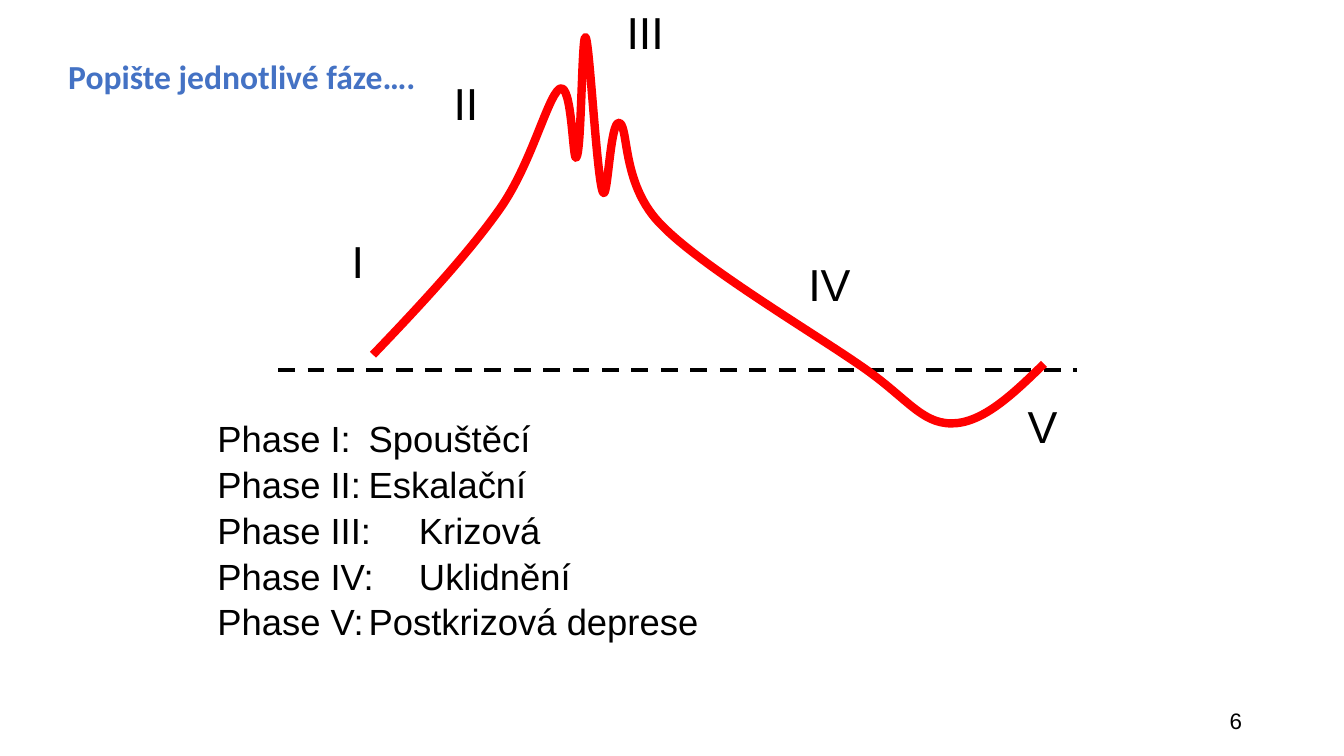
from lxml import etree
from pptx import Presentation
from pptx.dml.color import RGBColor
from pptx.enum.dml import MSO_LINE
from pptx.enum.shapes import MSO_CONNECTOR
from pptx.enum.text import MSO_ANCHOR as ANCHOR, PP_ALIGN as ALIGN
from pptx.oxml.ns import qn
from pptx.util import Cm, Pt

BLACK, RED, BLUE = "000000", "FF0000", "4472C4"

TITLE = "Popište jednotlivé fáze…."
PAGE_NUMBER = "6"
PHASES = [
    ("Phase I:", "Spouštěcí"),
    ("Phase II:", "Eskalační"),
    ("Phase III:", "Krizová"),
    ("Phase IV:", "Uklidnění"),
    ("Phase V:", "Postkrizová deprese"),
]
# numeral: left, top, width in cm
LABELS = {
    "I": (8.61, 5.77, 1.57),
    "II": (11.18, 1.78, 1.9),
    "III": (15.54, 0, 2.97),
    "IV": (20.12, 6.35, 1.9),
    "V": (25.65, 9.93, 1.9),
}
BASELINE = (7.01, 27.13, 9.32)  # left, right, height on the slide in cm
CURVE_START = (9.4, 8.94)
# two control points and an end point per segment, in cm
CURVE = [
    ((10.62, 7.67), (11.81, 6.38), (12.6, 5.26)),
    ((13.39, 4.14), (13.79, 2.46), (14.1, 2.24)),
    ((14.43, 2.03), (14.43, 4.19), (14.53, 3.96)),
    ((14.66, 3.76), (14.66, 0.79), (14.76, 0.94)),
    ((14.86, 1.09), (15.04, 4.47), (15.19, 4.83)),
    ((15.32, 5.18), (15.37, 2.95), (15.62, 3.1)),
    ((15.85, 3.25), (15.67, 4.7), (16.69, 5.69)),
    ((17.68, 6.71), (20.4, 8.33), (21.62, 9.17)),
    ((22.83, 9.98), (23.19, 10.67), (23.98, 10.67)),
    ((24.77, 10.67), (25.55, 9.91), (26.31, 9.17)),
]


def color(hex_string):
    return RGBColor.from_string(hex_string)


def add_text(s, box, lines, size, font="Arial", fill=BLACK, bold=False,
             anchor=ANCHOR.TOP, align=ALIGN.LEFT, spacing=1.0, wrap=True):
    tf = s.shapes.add_textbox(*map(Cm, box)).text_frame
    tf.word_wrap = wrap
    tf.vertical_anchor = anchor
    for i, line in enumerate(lines):
        p = tf.paragraphs[0] if i == 0 else tf.add_paragraph()
        p.alignment = align
        p.line_spacing = spacing
        r = p.add_run()
        r.text = line
        r.font.name, r.font.size, r.font.bold = font, Pt(size), bold
        r.font.color.rgb = color(fill)


def add_baseline(s):
    left, right, y = map(Cm, BASELINE)
    line = s.shapes.add_connector(MSO_CONNECTOR.STRAIGHT, left, y, right, y)
    line.line.color.rgb = color(BLACK)
    line.line.width = Pt(3)
    line.line.dash_style = MSO_LINE.DASH
    etree.SubElement(line._element.spPr, qn("a:effectLst"))


def add_curve(s):
    """Draw the outline through the end points, then bend each segment."""
    ends = [segment[-1] for segment in CURVE]
    builder = s.shapes.build_freeform(*map(Cm, CURVE_START))
    builder.add_line_segments([(Cm(x), Cm(y)) for x, y in ends], close=False)
    sp = builder.convert_to_shape()
    sp.shadow.inherit = False
    sp.fill.background()
    sp.line.color.rgb = color(RED)
    sp.line.width = Pt(6)
    segments = list(sp._element.iter(qn("a:lnTo")))
    for straight, points in zip(segments, CURVE):
        bend = etree.Element(qn("a:cubicBezTo"))
        for x, y in points:
            etree.SubElement(bend, qn("a:pt"), x=str(Cm(x) - sp.left),
                             y=str(Cm(y) - sp.top))
        straight.getparent().replace(straight, bend)


def main():
    prs = Presentation()
    prs.slide_width, prs.slide_height = Cm(33.87), Cm(19.05)
    s = prs.slides.add_slide(prs.slide_layouts[6])
    add_baseline(s)
    for numeral, (left, top, width) in LABELS.items():
        add_text(s, (left, top, width, 1.6), [numeral], 32)
    add_text(s, (5.23, 10.31, 14.05, 5.82), ["\t".join(row) for row in PHASES],
             26, spacing=1.05, wrap=False)
    add_curve(s)
    add_text(s, (1.47, 0.38, 20.75, 3.18), [TITLE], 24, "Calibri", BLUE,
             bold=True, anchor=ANCHOR.MIDDLE, spacing=0.9)
    add_text(s, (23.93, 17.65, 7.62, 1.02), [PAGE_NUMBER], 16,
             anchor=ANCHOR.MIDDLE, align=ALIGN.RIGHT)
    prs.save("out.pptx")


if __name__ == "__main__":
    main()
